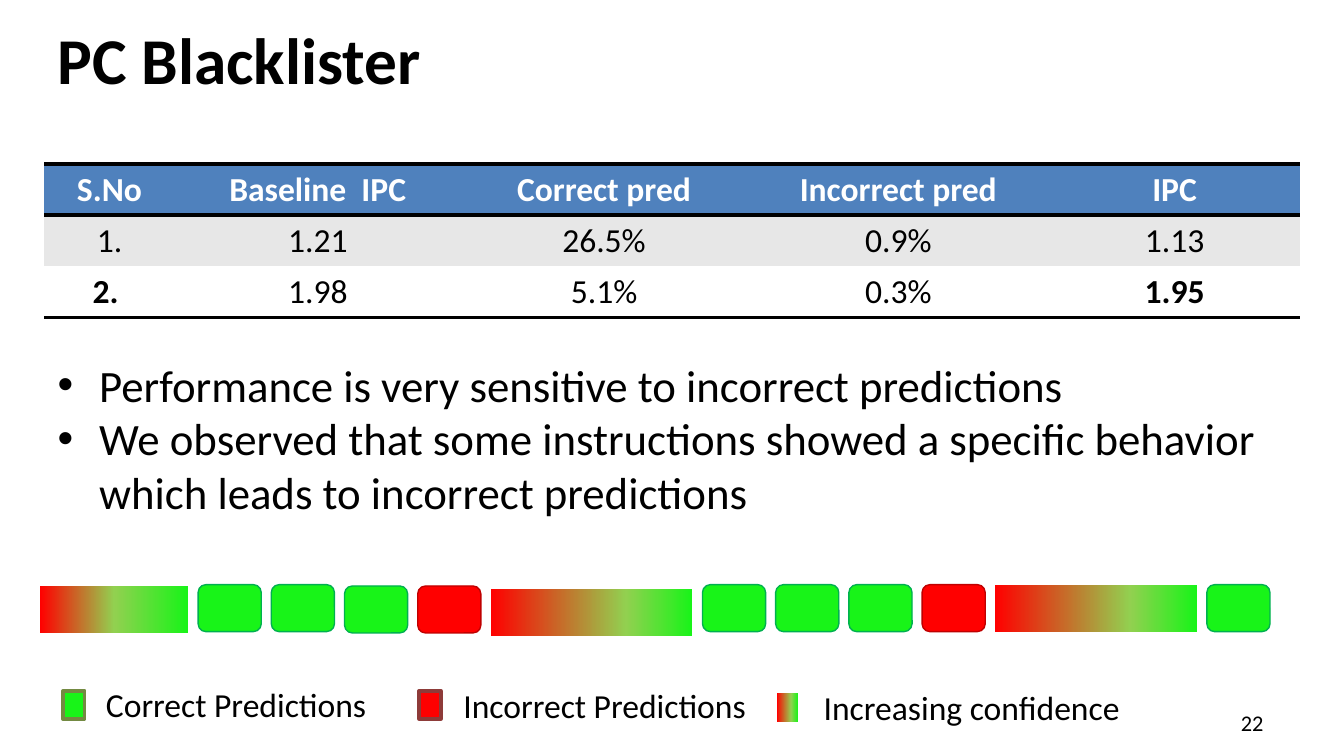
import pptx
import pptx.util
import pptx.dml.color
import pptx.enum.shapes
import pptx.enum.text
import pptx.oxml
import pptx.oxml.ns
import lxml.etree

Inches = pptx.util.Inches
Pt = pptx.util.Pt
qn = pptx.oxml.ns.qn
SHAPE = pptx.enum.shapes.MSO_SHAPE
ALIGN = pptx.enum.text.PP_ALIGN
ANCHOR = pptx.enum.text.MSO_ANCHOR

COLOURS = {
    "ink": "000000", "paper": "FFFFFF", "header": "4F81BD", "band": "E7E7E7",
    "correct": "18F418", "correct_edge": "00B050", "correct_key": "738A42",
    "incorrect": "FF0000", "incorrect_edge": "C00000", "incorrect_key": "8E3B39",
    "middle": "92D050",
}
PLAIN_TABLE = "{2D5ABB26-0587-4C30-8999-92F81FD0307C}"


def colour(name):
    return pptx.dml.color.RGBColor.from_string(COLOURS[name])


def inches(box):
    return [Inches(length) for length in box]


def set_values(target, values):
    for name, value in values.items():
        setattr(target, name, value)


def add_span(para, text, size, tint="ink", bold=False):
    span = para.add_run()
    span.text = text
    set_values(span.font, {"name": "Calibri", "size": Pt(size), "bold": bold})
    span.font.color.rgb = colour(tint)


def add_text(page, box, lines, size, bold=False, align=ALIGN.LEFT, anchor=ANCHOR.TOP):
    frame = page.shapes.add_textbox(*inches(box)).text_frame
    set_values(frame, {"word_wrap": True, "vertical_anchor": anchor})
    for index, line in enumerate(lines):
        para = frame.add_paragraph() if index else frame.paragraphs[0]
        para.alignment = align
        add_span(para, line, size, bold=bold)
    return frame


def add_block(page, box, kind, fill, edge=None, width=0.75):
    block = page.shapes.add_shape(kind, *inches(box))
    block.shadow.inherit = False
    block.fill.solid()
    block.fill.fore_color.rgb = colour(fill)
    if edge:
        block.line.color.rgb = colour(edge)
        block.line.width = Pt(width)
    else:
        block.line.fill.background()
    return block


def add_gradient(page, box, middle=33):
    block = add_block(page, box, SHAPE.RECTANGLE, "correct")
    block.fill.gradient()
    block.fill.gradient_angle = 180
    stops = block._element.spPr.find(qn("a:gradFill")).find(qn("a:gsLst"))
    for stop in list(stops):
        stops.remove(stop)
    for place, name in ((0, "correct"), (middle, "middle"), (100, "incorrect")):
        stop = lxml.etree.SubElement(stops, qn("a:gs"), pos=str(place * 1000))
        lxml.etree.SubElement(stop, qn("a:srgbClr"), val=COLOURS[name])


def add_border(cell, sides):
    for index, side in enumerate(sides):
        line = pptx.oxml.parse_xml(
            f'<a:{side} xmlns:a="http://schemas.openxmlformats.org/drawingml/2006/main" '
            f'w="{Pt(2)}"><a:solidFill><a:srgbClr val="{COLOURS["ink"]}"/></a:solidFill></a:{side}>')
        cell._tc.get_or_add_tcPr().insert(index, line)


def add_results(page, box):
    rows = [
        ["S.No", "Baseline  IPC", "Correct pred", "Incorrect pred", "IPC"],
        ["1.", "1.21", "26.5%", "0.9%", "1.13"],
        ["2. ", "1.98", "5.1%", "0.3%", "1.95"],
    ]
    fills = ["header", "band", "paper"]
    borders = [["lnT", "lnB"], [], ["lnB"]]
    table = page.shapes.add_table(len(rows), len(rows[0]), *inches(box)).table
    table._tbl.tblPr.find(qn("a:tableStyleId")).text = PLAIN_TABLE
    for column, width in zip(table.columns, (0.97, 2.13, 2.13, 2.25, 1.86)):
        column.width = Inches(width)
    for row, texts in enumerate(rows):
        table.rows[row].height = Inches(box[3] / len(rows))
        for column, text in enumerate(texts):
            cell = table.cell(row, column)
            set_values(cell, {"margin_left": Inches(0.1), "margin_right": Inches(0.1),
                              "margin_top": Inches(0.04), "margin_bottom": Inches(0.04)})
            cell.fill.solid()
            cell.fill.fore_color.rgb = colour(fills[row])
            add_border(cell, borders[row])
            para = cell.text_frame.paragraphs[0]
            para.alignment = ALIGN.CENTER
            bold = row == 0 or (row == 2 and column in (0, 4))
            add_span(para, text, 18, "ink" if row else "paper", bold)


def add_findings(page, box):
    frame = add_text(page, box, [
        "Performance is very sensitive to incorrect predictions",
        "We observed that some instructions showed a specific behavior "
        "which leads to incorrect predictions",
    ], 24)
    for para in frame.paragraphs:
        properties = para._p.get_or_add_pPr()
        properties.set("marL", str(Inches(0.31)))
        properties.set("indent", str(-Inches(0.31)))
        lxml.etree.SubElement(properties, qn("a:buFont"), typeface="Arial")
        lxml.etree.SubElement(properties, qn("a:buChar"), char="•")


def add_sequence(page, box):
    left, top, width, height = box
    ramp, tile = 1.5, 0.47
    run = ["correct"] * 3 + ["incorrect"]
    kinds = ["first", *run, "ramp", *run, "ramp", "correct"]
    drops = {0: 0.01, 3: 0.01, 4: 0.01, 5: 0.03}
    widths = [{"first": 1.1, "ramp": ramp}.get(kind, tile) for kind in kinds]
    gap = (width - sum(widths)) / (len(kinds) - 1)
    for index, (kind, size) in enumerate(zip(kinds, widths)):
        place = (left, top + drops.get(index, 0), size, height)
        if kind in ("first", "ramp"):
            add_gradient(page, place, 50 if kind == "first" else 33)
        else:
            add_block(page, place, SHAPE.ROUNDED_RECTANGLE, kind, kind + "_edge")
        left += size + gap


def add_legend(page, box):
    left, top, width, height = box
    entries = [
        ("correct", 0, 0.1, 0.22, 0, 2.33, "Correct Predictions"),
        ("incorrect", 2.65, 0.1, 2.88, 0.01, 2.33, "Incorrect Predictions"),
        ("ramp", 5.31, 0.12, 5.56, 0.02, 2.88, "Increasing confidence"),
    ]
    for kind, key_x, key_y, text_x, text_y, text_width, label in entries:
        key = (left + key_x, top + key_y, 0.16, 0.21)
        if kind == "ramp":
            add_gradient(page, key)
        else:
            add_block(page, key, SHAPE.RECTANGLE, kind, kind + "_key", 2)
        add_text(page, (left + text_x, top + text_y, text_width, height), [label], 18)


def build_slide(deck):
    page = deck.slides.add_slide(deck.slide_layouts[6])
    add_text(page, (0.33, 0.06, 9.33, 0.75), ["PC Blacklister"], 35, True, anchor=ANCHOR.MIDDLE)
    add_results(page, (0.33, 1.22, 9.33, 1.14))
    add_text(page, (7.17, 5.25, 2.33, 0.26), ["22"], 12, align=ALIGN.RIGHT, anchor=ANCHOR.MIDDLE)
    add_findings(page, (0.33, 2.61, 9.33, 1.31))
    add_sequence(page, (0.3, 4.35, 9.15, 0.35))
    add_legend(page, (0.47, 5.04, 8.44, 0.4))


def main():
    deck = pptx.Presentation()
    set_values(deck, {"slide_width": Inches(10), "slide_height": Inches(10 * 9 / 16)})
    build_slide(deck)
    deck.save("out.pptx")


if __name__ == "__main__":
    main()
